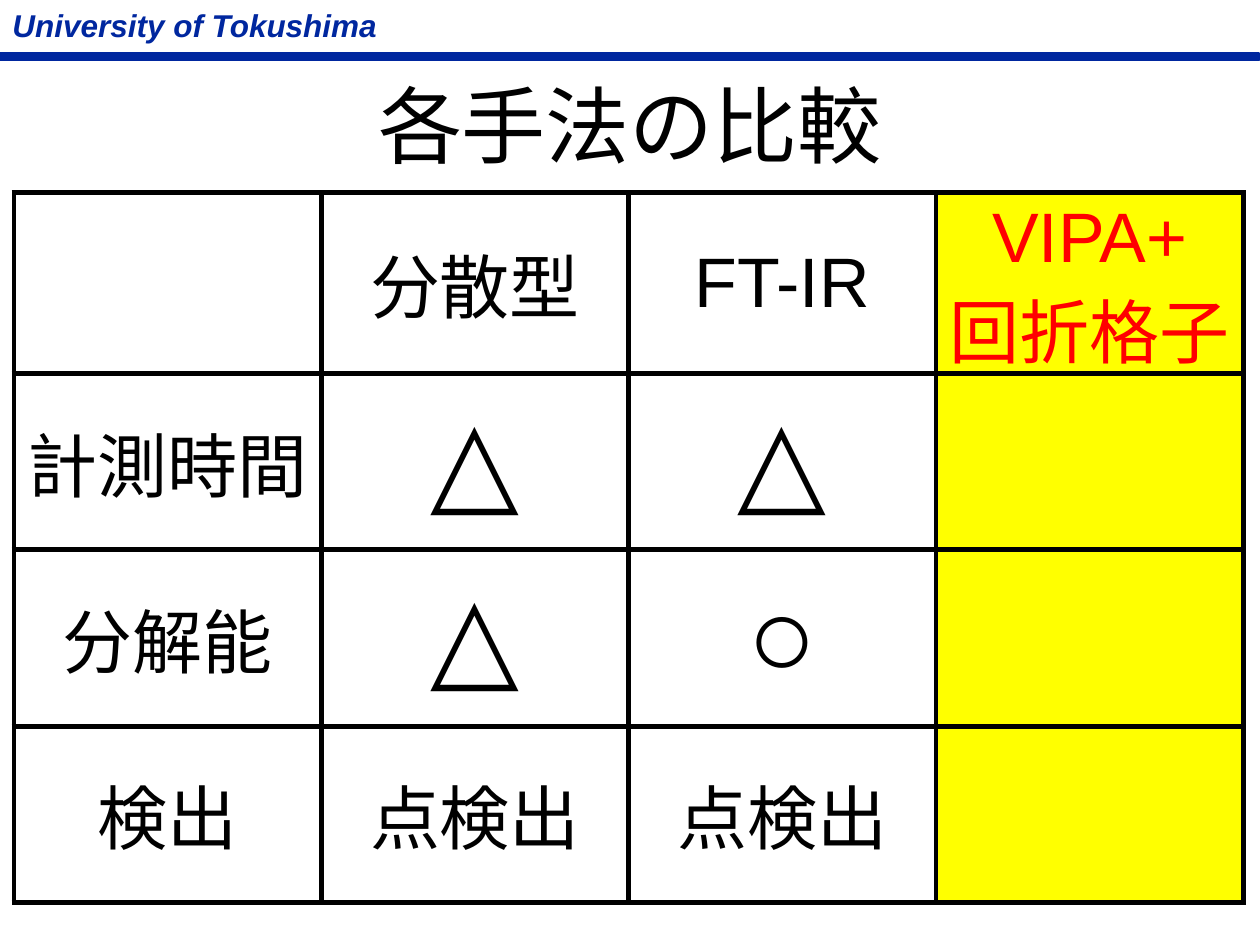
from pptx import Presentation
from pptx.dml.color import RGBColor
from pptx.enum.shapes import MSO_SHAPE as Shape
from pptx.enum.text import MSO_ANCHOR as Anchor, MSO_AUTO_SIZE as AutoSize, PP_ALIGN as Align
from pptx.oxml import parse_xml
from pptx.oxml.ns import nsdecls
from pptx.util import Inches, Pt

COLORS = {"navy": "00279F", "black": "000000", "white": "FFFFFF",
          "red": "FF0000", "yellow": "FFFF00"}
FONT = "Arial"
SYMBOLS = "△○"
ROWS = [
    ["", "分散型", "FT-IR", "VIPA+\n回折格子"],
    ["計測時間", "△", "△", ""],
    ["分解能", "△", "○", ""],
    ["検出", "点検出", "点検出", ""],
]


def rgb(name):
    return RGBColor.from_string(COLORS[name])


class SlideBuilder:
    def __init__(self, slide):
        self.slide = slide

    def style(self, tf, size, color, align=Align.LEFT, bold=False, italic=False):
        for p in tf.paragraphs:
            p.alignment = align
            for r in p.runs:
                r.font.name, r.font.size = FONT, Pt(size)
                r.font.bold, r.font.italic = bold, italic
                r.font.color.rgb = rgb(color)

    def bar(self, x, y, w, h, color):
        s = self.slide.shapes.add_shape(Shape.RECTANGLE, Inches(x), Inches(y), Inches(w), Inches(h))
        s.shadow.inherit = False
        s.fill.solid()
        s.fill.fore_color.rgb = rgb(color)
        s.line.color.rgb = rgb(color)
        s.line.width = Pt(1)

    def label(self, text, x, y, w, h, size, color):
        tf = self.slide.shapes.add_textbox(Inches(x), Inches(y), Inches(w), Inches(h)).text_frame
        tf.word_wrap = False
        tf.auto_size = AutoSize.SHAPE_TO_FIT_TEXT
        tf.text = text
        self.style(tf, size, color, bold=True, italic=True)

    def title(self, text, x, y, w, h, size):
        s = self.slide.shapes.title
        s.left, s.top, s.width, s.height = Inches(x), Inches(y), Inches(w), Inches(h)
        s.text_frame.text = text
        s.text_frame.vertical_anchor = Anchor.MIDDLE
        self.style(s.text_frame, size, "black", Align.CENTER)

    def borders(self, cell, width):
        tc_pr = cell._tc.get_or_add_tcPr()
        for side in ("lnL", "lnR", "lnT", "lnB"):
            tc_pr.append(parse_xml(
                f'<a:{side} {nsdecls("a")} w="{Pt(width)}"><a:solidFill>'
                f'<a:srgbClr val="{COLORS["black"]}"/></a:solidFill></a:{side}>'))

    def table(self, rows, x, y, col_w, row_h):
        n_rows, n_cols = len(rows), len(rows[0])
        table = self.slide.shapes.add_table(
            n_rows, n_cols, Inches(x), Inches(y),
            Inches(col_w * n_cols), Inches(row_h * n_rows)).table
        for col in table.columns:
            col.width = Inches(col_w)
        for i, row in enumerate(rows):
            table.rows[i].height = Inches(row_h)
            for j, text in enumerate(row):
                cell = table.cell(i, j)
                highlighted = j == n_cols - 1
                self.borders(cell, 3)
                cell.fill.solid()
                cell.fill.fore_color.rgb = rgb("yellow" if highlighted else "white")
                cell.vertical_anchor = Anchor.MIDDLE
                if text:
                    cell.text_frame.text = text
                    self.style(cell.text_frame, 66 if text in SYMBOLS else 40,
                               "red" if highlighted else "black", Align.CENTER)


def main():
    prs = Presentation()
    prs.slide_width, prs.slide_height = Inches(10), Inches(7.5)
    sb = SlideBuilder(prs.slides.add_slide(prs.slide_layouts[5]))

    # Header band
    sb.bar(0, 0.42, 9.99, 0.06, "navy")
    sb.label("University of Tokushima", 0, 0, 3.12, 0.4, 18, "navy")

    # Title and comparison table
    sb.title("各手法の比較", 0.75, 0.36, 8.5, 1.25, 48)
    sb.table(ROWS, 0.11, 1.53, 2.44, 1.4)

    prs.save("out.pptx")


if __name__ == "__main__":
    main()
